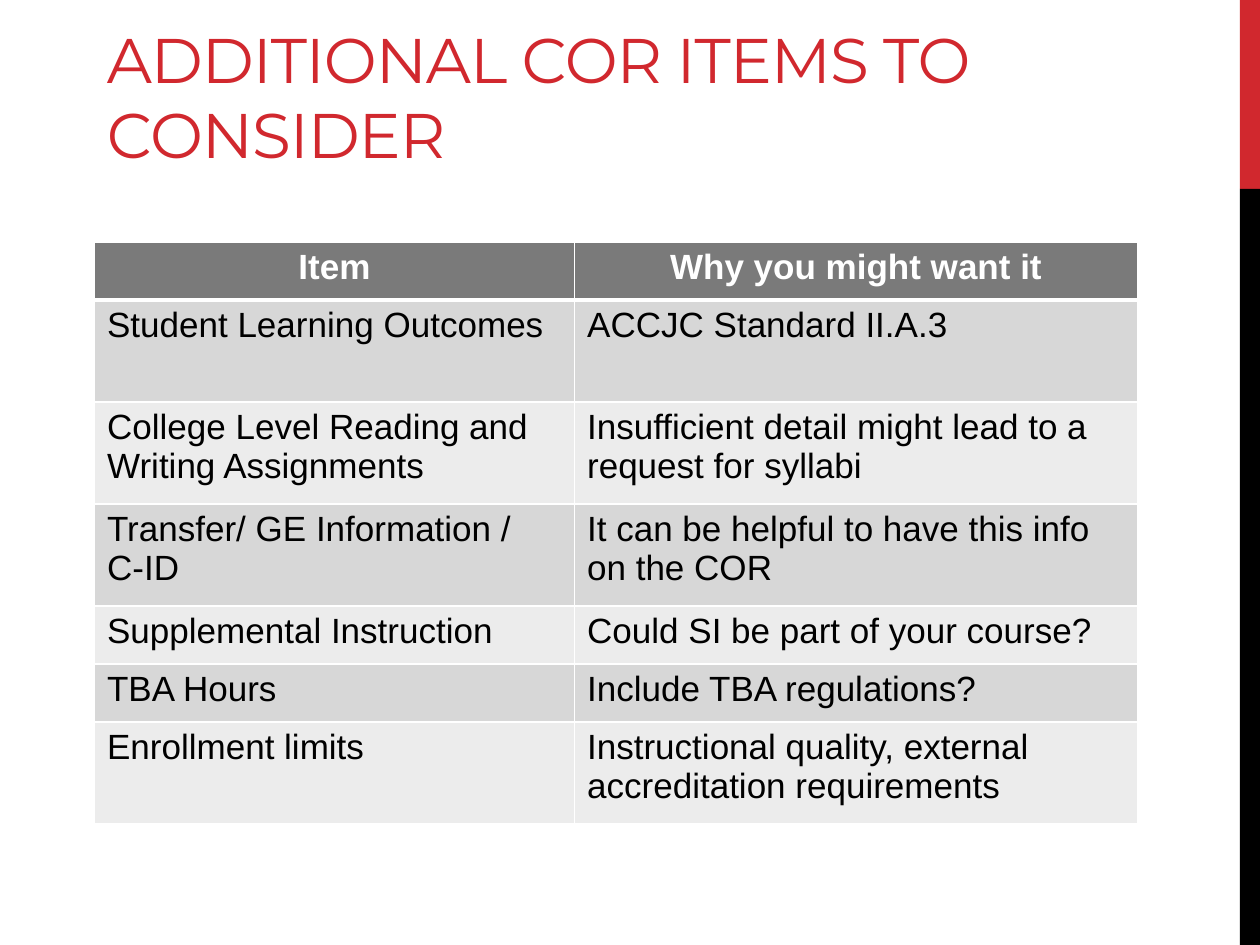
import pptx
import pptx.dml.color
import pptx.enum.shapes
import pptx.enum.text
import pptx.oxml.ns
import pptx.util
from dataclasses import dataclass
from lxml import etree

Inches = pptx.util.Inches
Pt = pptx.util.Pt
ALIGN = pptx.enum.text.PP_ALIGN


@dataclass(frozen=True)
class Theme:
    accent: str = "D1282E"
    black: str = "000000"
    white: str = "FFFFFF"
    header: str = "7A7A7A"
    bands: tuple = ("D7D7D7", "ECECEC")
    title_font: str = "Montserrat"
    body_font: str = "Arial"
    title_size: int = 36
    body_size: int = 20


def rgb(value):
    return pptx.dml.color.RGBColor.from_string(value)


def write_text(tf, text, *, font, size, color, bold=False, align=ALIGN.LEFT, spacing=None):
    p = tf.paragraphs[0]
    p.alignment = align
    r = p.add_run()
    r.text = text
    r.font.name = font
    r.font.size = Pt(size)
    r.font.bold = bold
    r.font.color.rgb = rgb(color)
    if spacing is not None:
        r.font._element.set("spc", str(round(spacing * 100)))


def set_borders(cell, color, **widths):
    """Add cell borders; each keyword is a side tag with its width in points."""
    qn = pptx.oxml.ns.qn
    tcPr = cell._tc.get_or_add_tcPr()
    for i, (side, width) in enumerate(widths.items()):
        ln = etree.Element(qn("a:" + side), w=str(Pt(width)))
        fill = etree.SubElement(ln, qn("a:solidFill"))
        etree.SubElement(fill, qn("a:srgbClr"), val=color)
        tcPr.insert(i, ln)  # borders come before the fill


class SlideBuilder:
    def __init__(self, s, theme):
        self.s = s
        self.theme = theme

    def bar(self, left, top, width, height, color):
        sp = self.s.shapes.add_shape(
            pptx.enum.shapes.MSO_SHAPE.RECTANGLE,
            Inches(left), Inches(top), Inches(width), Inches(height))
        sp.shadow.inherit = False
        sp.fill.solid()
        sp.fill.fore_color.rgb = rgb(color)
        sp.line.fill.background()

    def title(self, text, left, top, width, height):
        sp = self.s.shapes.add_textbox(
            Inches(left), Inches(top), Inches(width), Inches(height))
        tf = sp.text_frame
        tf.word_wrap = True
        tf.vertical_anchor = pptx.enum.text.MSO_ANCHOR.BOTTOM
        t = self.theme
        write_text(tf, text, font=t.title_font, size=t.title_size,
                   color=t.accent, spacing=-0.6)

    def table(self, rows, left, top, col_widths, row_heights):
        t = self.theme
        table = self.s.shapes.add_table(
            len(rows), len(col_widths), Inches(left), Inches(top),
            Inches(sum(col_widths)), Inches(sum(row_heights))).table
        for column, width in zip(table.columns, col_widths):
            column.width = Inches(width)
        for i, (texts, height) in enumerate(zip(rows, row_heights)):
            table.rows[i].height = Inches(height)
            header = i == 0
            for j, text in enumerate(texts):
                cell = table.cell(i, j)
                cell.fill.solid()
                cell.fill.fore_color.rgb = rgb(t.header if header else t.bands[(i - 1) % 2])
                # A thick rule separates the header from the body
                set_borders(cell, t.white, lnL=1, lnR=1,
                            lnT=3 if i == 1 else 1, lnB=3 if header else 1)
                write_text(cell.text_frame, text, font=t.body_font, size=t.body_size,
                           color=t.white if header else t.black, bold=header,
                           align=ALIGN.CENTER if header else ALIGN.LEFT)


def main():
    prs = pptx.Presentation()
    prs.slide_width, prs.slide_height = Inches(10), Inches(7.5)
    theme = Theme()
    slide = SlideBuilder(prs.slides.add_slide(prs.slide_layouts[6]), theme)

    # Side bars
    slide.bar(9.84, 0, 0.16, 1.5, theme.accent)
    slide.bar(9.84, 1.5, 0.16, 6, theme.black)

    # Title
    slide.title("ADDITIONAL COR ITEMS TO CONSIDER", 0.75, 0.07, 8.5, 1.34)

    # Table of items and reasons
    single, double = 0.46, 0.81
    rows = [
        ("Item", "Why you might want it"),
        ("Student Learning Outcomes", "ACCJC Standard II.A.3"),
        ("College Level Reading and Writing Assignments",
         "Insufficient detail might lead to a request for syllabi"),
        ("Transfer/ GE Information /  C-ID",
         "It can be helpful to have this info on the COR"),
        ("Supplemental Instruction", "Could SI be part of your course?"),
        ("TBA Hours", "Include TBA regulations?"),
        ("Enrollment limits",
         "Instructional quality, external accreditation requirements"),
    ]
    slide.table(rows, 0.75, 1.92, col_widths=(3.81, 4.47),
                row_heights=(single, double, double, double, single, single, double))

    prs.save("out.pptx")


if __name__ == "__main__":
    main()
